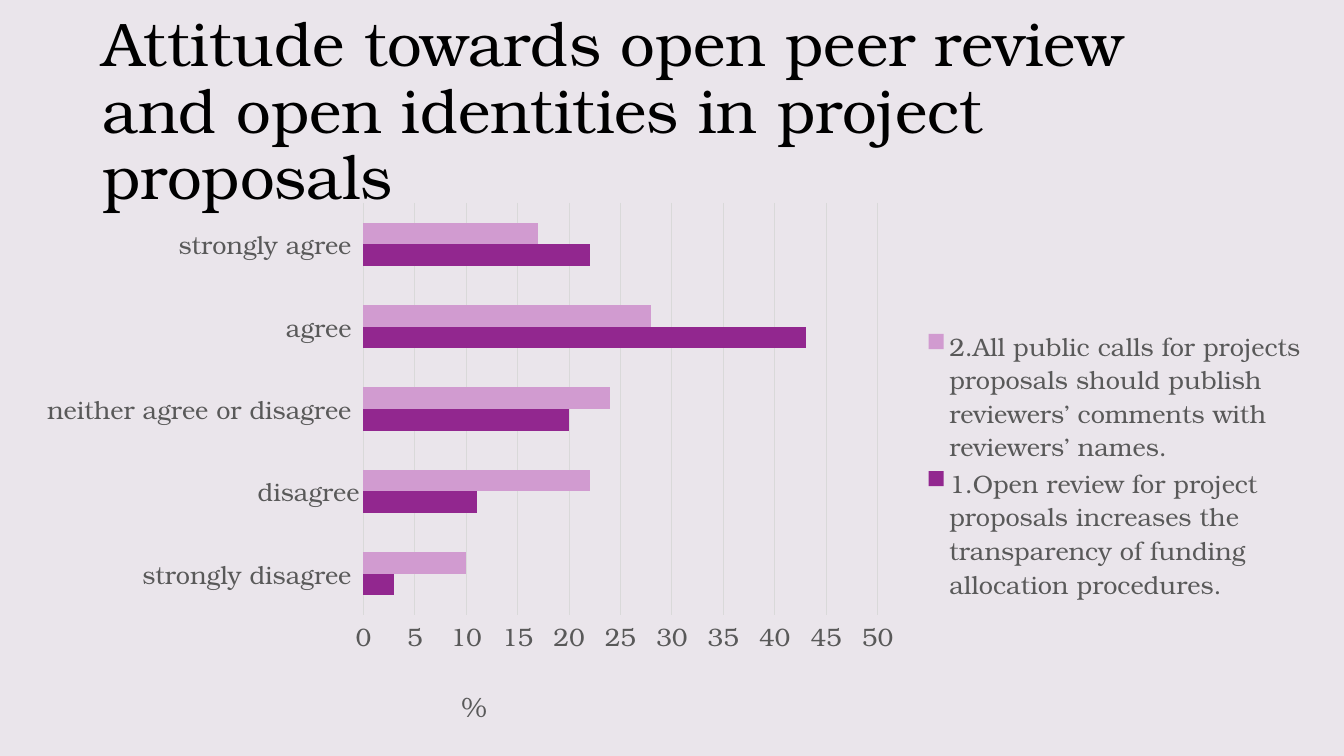
from lxml import etree
from pptx import Presentation
from pptx import util as u
from pptx.chart.data import CategoryChartData
from pptx.dml.color import RGBColor
from pptx.enum import chart as ch, text
from pptx.oxml.ns import qn

FONT = "TeX Gyre Bonum"
COLORS = {"bg": "EAE5EB", "title": "000000", "label": "595959",
          "grid": "D9D9D9", "dark": "92278F", "light": "D19BD0"}


def style(font, size, color):
    for name, value in {"name": FONT, "size": u.Pt(size), "bold": False}.items():
        setattr(font, name, value)
    font.color.rgb = RGBColor.from_string(COLORS[color])


def place(parent, index, values):
    for old in parent.findall(qn("c:layout")):
        parent.remove(old)
    layout = etree.Element(qn("c:layout"))
    manual = etree.SubElement(layout, qn("c:manualLayout"))
    for tag, value in values.items():
        etree.SubElement(manual, qn(f"c:{tag}")).set("val", str(value))
    parent.insert(index, layout)


prs = Presentation()
prs.slide_width, prs.slide_height = u.Cm(33.87), u.Cm(19.05)
s = prs.slides.add_slide(prs.slide_layouts[6])
s.background.fill.solid()
s.background.fill.fore_color.rgb = RGBColor.from_string(COLORS["bg"])

tf = s.shapes.add_textbox(u.Cm(2.33), u.Cm(1.01), u.Cm(29.21), u.Cm(3.68)).text_frame
tf.word_wrap = True
tf.vertical_anchor = text.MSO_ANCHOR.MIDDLE
p = tf.paragraphs[0]
p.line_spacing = 0.9
r = p.add_run()
r.text = "Attitude towards open peer review and open identities in project proposals"
style(r.font, 44, "title")

data = CategoryChartData()
data.categories = ["strongly disagree ", "disagree", "neither agree or disagree ",
                   " agree ", "strongly agree "]
data.add_series("1.Open review for project proposals increases the transparency "
                "of funding allocation procedures. ", [3, 11, 20, 43, 22])
data.add_series("2.All public calls for projects proposals should publish "
                "reviewers’ comments with reviewers’ names. ", [10, 22, 24, 28, 17])
chart = s.shapes.add_chart(ch.XL_CHART_TYPE.BAR_CLUSTERED, u.Cm(0.51), u.Cm(4.8),
                           u.Cm(32.64), u.Cm(13.69), data).chart
style(chart.font, 10, "title")
chart.has_title = False

plot = chart.plots[0]
plot.gap_width = 182
plot.overlap = 0
plot.vary_by_categories = False
for series, color in zip(plot.series, ["dark", "light"]):
    series.format.fill.solid()
    series.format.fill.fore_color.rgb = RGBColor.from_string(COLORS[color])

cat, val = chart.category_axis, chart.value_axis
for axis in (cat, val):
    axis.major_tick_mark = axis.minor_tick_mark = ch.XL_TICK_MARK.NONE
    style(axis.tick_labels.font, 18, "label")
val.minimum_scale, val.maximum_scale, val.major_unit = 0, 50, 5
val.has_major_gridlines = True
val.format.line.fill.background()
for line in (cat.format.line, val.major_gridlines.format.line):
    line.color.rgb = RGBColor.from_string(COLORS["grid"])
    line.width = u.Pt(0.75)

val.has_title = True
r = val.axis_title.text_frame.paragraphs[0].add_run()
r.text = "%"
style(r.font, 20, "label")

chart.has_legend = True
legend = chart.legend
legend.position = ch.XL_LEGEND_POSITION.RIGHT
legend.include_in_layout = False
style(legend.font, 18, "label")

root = chart.element if hasattr(chart, "element") else chart._chartSpace
edge = {"xMode": "edge", "yMode": "edge"}
place(root.find(".//" + qn("c:plotArea")), 0,
      {"layoutTarget": "inner", **edge, "x": 0.265, "y": 0.023, "w": 0.397, "h": 0.759})
place(root.find(".//" + qn("c:legend")), 1,
      {**edge, "x": 0.695, "y": 0.25, "w": 0.3, "h": 0.51})
place(root.find(".//" + qn("c:valAx")).find(qn("c:title")), 1,
      {**edge, "x": 0.337, "y": 0.9})

prs.save("out.pptx")
